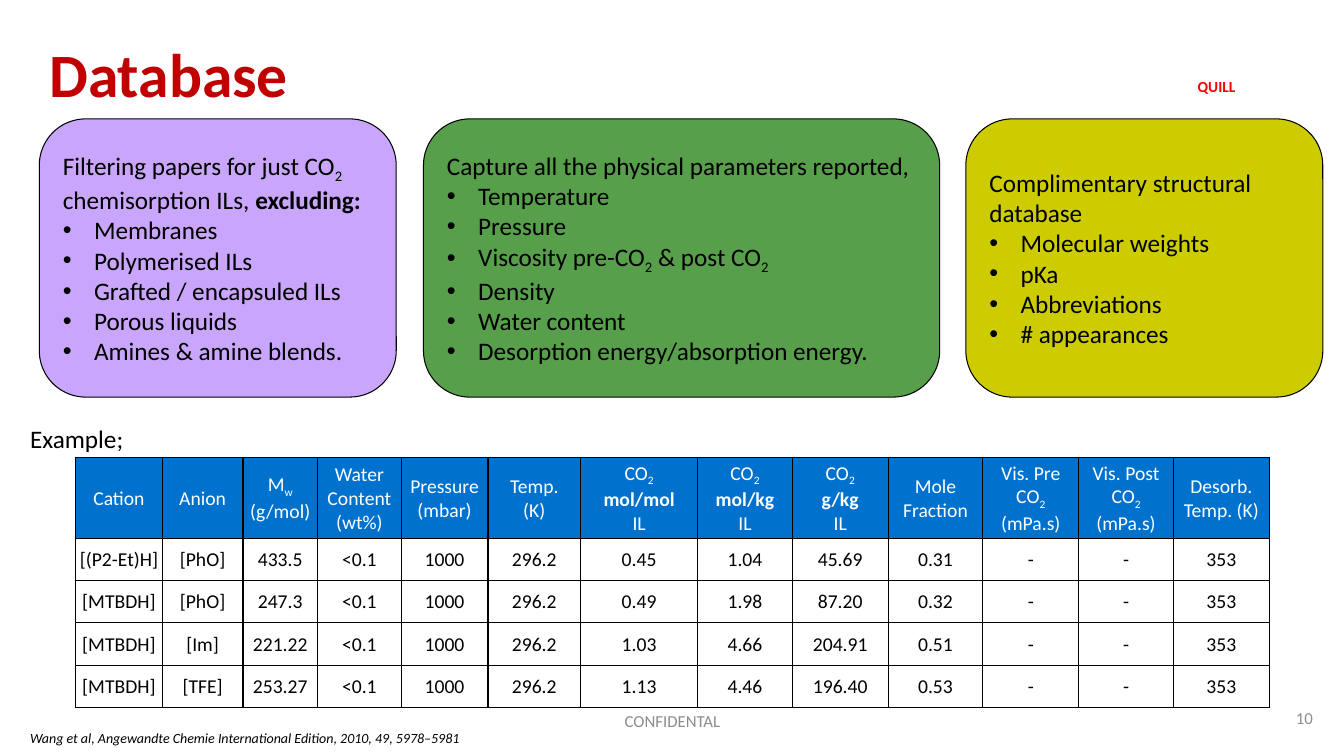
"""Build the Database slide: three criteria panels above an example data table."""
from lxml.etree import SubElement
from pptx import Presentation
from pptx.dml.color import RGBColor
from pptx.enum.shapes import MSO_SHAPE
from pptx.enum.text import MSO_ANCHOR as Anchor, PP_ALIGN as Align
from pptx.oxml.ns import qn
from pptx.util import Pt

PX = 9144
BLACK, WHITE, BLUE, GREY = "000000", "FFFFFF", "0072CE", "8C8C8C"


def color(code):
    return RGBColor.from_string(code)


def write(frame, lines, size, ink=BLACK, align=Align.LEFT, bold=None, italic=None):
    """Fill a frame; in a line, | splits spans, _ marks subscript, * bold, • a bullet."""
    frame.word_wrap = True
    for index, line in enumerate(lines):
        para = frame.paragraphs[0] if index == 0 else frame.add_paragraph()
        para.alignment = align
        if line.startswith("•"):
            props = para._p.get_or_add_pPr()
            props.set("marL", str(31 * PX))
            props.set("indent", str(-31 * PX))
            SubElement(props, qn("a:buFont")).set("typeface", "Arial")
            SubElement(props, qn("a:buChar")).set("char", "•")
        font = para.font
        font.name, font.size, font.bold, font.italic = "Calibri", Pt(size), bold, italic
        font.color.rgb = color(ink)
        for piece in line.removeprefix("•").split("|"):
            span = para.add_run()
            span.text = piece.lstrip("_*")
            if piece.startswith("_"):
                span.font._element.set("baseline", "-25000")
            elif piece.startswith("*"):
                span.font.bold = True


deck = Presentation()
deck.slide_width, deck.slide_height = 1333 * PX, 750 * PX
page = deck.slides.add_slide(deck.slide_layouts[6])

labels = [
    ("Database", (39, 13, 1260, 118), 44, "C00000", Align.LEFT, Anchor.MIDDLE, True, None),
    ("QUILL", (1178, 72, 74, 29), 11, "FF0000", Align.LEFT, Anchor.TOP, True, None),
    ("10", (1261, 692, 51, 40), 12, GREY, Align.RIGHT, Anchor.MIDDLE, None, None),
    ("CONFIDENTAL", (442, 695, 450, 40), 12, GREY, Align.CENTER, Anchor.MIDDLE, None, None),
    ("Example;", (20, 415, 120, 40), 18, BLACK, Align.LEFT, Anchor.TOP, None, None),
    ("Wang et al, Angewandte Chemie International Edition, 2010, 49, 5978–5981",
     (20, 719, 1260, 28), 10, BLACK, Align.LEFT, Anchor.TOP, None, True),
]
for text, place, size, ink, align, anchor, bold, italic in labels:
    box = page.shapes.add_textbox(*(side * PX for side in place))
    box.text_frame.vertical_anchor = anchor
    write(box.text_frame, [text], size, ink, align, bold, italic)

columns = [
    (86, ["Cation"]),
    (80, ["Anion"]),
    (74, ["M|_w", "(g/mol)"]),
    (83, ["Water Content", "(wt%)"]),
    (86, ["Pressure", "(mbar)"]),
    (92, ["Temp.", "(K)"]),
    (116, ["CO|_2", "*mol/mol", "IL"]),
    (94, ["CO|_2", "*mol/kg", "IL"]),
    (95, ["CO|_2", "*g/kg", "IL"]),
    (94, ["Mole Fraction"]),
    (95, ["Vis. Pre", "CO|_2", "(mPa.s)"]),
    (94, ["Vis. Post CO|_2", "(mPa.s)"]),
    (95, ["Desorb. Temp. (K)"]),
]
samples = [
    ("[(P2-Et)H]", "[PhO]", "433.5", "0.45", "1.04", "45.69", "0.31"),
    ("[MTBDH]", "[PhO]", "247.3", "0.49", "1.98", "87.20", "0.32"),
    ("[MTBDH]", "[Im]", "221.22", "1.03", "4.66", "204.91", "0.51"),
    ("[MTBDH]", "[TFE]", "253.27", "1.13", "4.46", "196.40", "0.53"),
]
rows = [[heading for width, heading in columns]]
for sample in samples:
    values = (*sample[:3], "<0.1", "1000", "296.2", *sample[3:], "-", "-", "353")
    rows.append([[value] for value in values])

table = page.shapes.add_table(
    len(rows), len(columns), 75 * PX, 454 * PX, 1184 * PX, 248 * PX).table
table.first_row = table.horz_banding = False
for column, (width, heading) in zip(table.columns, columns):
    column.width = width * PX
for number, row in enumerate(rows):
    table.rows[number].height = (42 if number else 80) * PX
    for place, lines in enumerate(row):
        cell = table.cell(number, place)
        cell.margin_left = cell.margin_right = cell.margin_top = PX
        cell.margin_bottom = 0
        cell.vertical_anchor = Anchor.MIDDLE
        for side in ("lnL", "lnR", "lnT", "lnB"):
            border = SubElement(cell._tc.get_or_add_tcPr(), qn(f"a:{side}"), w=str(Pt(1)))
            paint = SubElement(border, qn("a:solidFill"))
            SubElement(paint, qn("a:srgbClr"), val=BLACK)
        cell.fill.solid()
        cell.fill.fore_color.rgb = color(WHITE if number else BLUE)
        write(cell.text_frame, lines, 14, BLACK if number else WHITE, Align.CENTER)

panels = [
    (39, 354, "C9A6FC", [
        "Filtering papers for just CO|_2| chemisorption ILs, |*excluding:", "•Membranes",
        "•Polymerised ILs", "•Grafted / encapsuled ILs", "•Porous liquids",
        "•Amines & amine blends."]),
    (420, 512, "579F4B", [
        "Capture all the physical parameters reported,", "•Temperature", "•Pressure",
        "•Viscosity pre-CO|_2| & post CO|_2", "•Density", "•Water content",
        "•Desorption energy/absorption energy."]),
    (958, 354, "CCCC00", [
        "Complimentary structural database", "•Molecular weights", "•pKa",
        "•Abbreviations", "•# appearances"]),
]
for left, width, fill, lines in panels:
    panel = page.shapes.add_shape(
        MSO_SHAPE.ROUNDED_RECTANGLE, left * PX, 118 * PX, width * PX, 276 * PX)
    panel.shadow.inherit = False
    panel.fill.solid()
    panel.fill.fore_color.rgb = color(fill)
    panel.line.color.rgb = color(BLACK)
    panel.line.width = Pt(0.75)
    panel.text_frame.vertical_anchor = Anchor.MIDDLE
    write(panel.text_frame, lines, 18)

deck.save("out.pptx")
